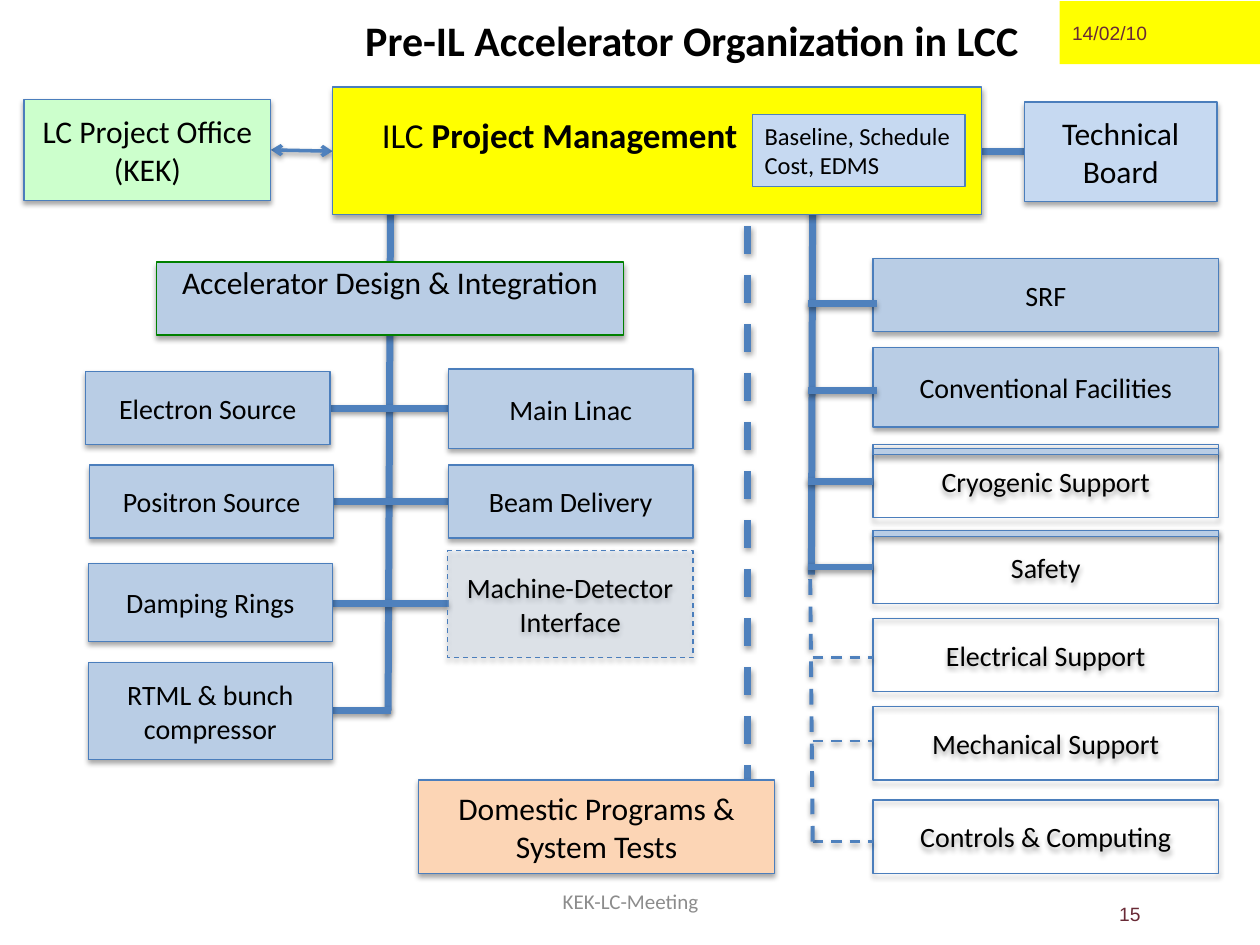
"""Build the accelerator organization chart slide."""
from dataclasses import dataclass

from lxml import etree
from pptx import Presentation
from pptx import util as u
from pptx.dml import color
from pptx.enum import dml, shapes, text
from pptx.oxml import ns

PROCESS = shapes.MSO_SHAPE.FLOWCHART_PROCESS
RECTANGLE = shapes.MSO_SHAPE.RECTANGLE
LEFT, CENTER, RIGHT = text.PP_ALIGN.LEFT, text.PP_ALIGN.CENTER, text.PP_ALIGN.RIGHT
TOP, MIDDLE = text.MSO_ANCHOR.TOP, text.MSO_ANCHOR.MIDDLE


@dataclass(frozen=True)
class Theme:
    """Colours, fonts and type sizes of the chart."""
    ink: str = "000000"
    maroon: str = "692A36"
    gray: str = "8C8C8C"
    yellow: str = "FFFF00"
    blue: str = "B9CDE5"
    pale_blue: str = "C6D9F1"
    mint: str = "CCFFCC"
    peach: str = "FCD5B5"
    green: str = "008000"
    outline: str = "4B7EBC"
    connector: str = "4F81BD"
    body_font: str = "Calibri"
    meta_font: str = "Arial"
    title: int = 24
    lead: int = 20
    unit: int = 18
    group: int = 16
    note: int = 14
    footer: int = 12
    meta: int = 11


class Chart:
    """Draws the elements of the chart on the current slide."""

    def __init__(self, slide, theme):
        """Keep the slide and its style."""
        self.slide, self.theme = slide, theme

    @staticmethod
    def apply(target, formats):
        """Set attributes of an object from a dict."""
        for name, value in formats.items():
            setattr(target, name, value)

    @staticmethod
    def add_xml(parent, tag, **attributes):
        """Append a drawing element and return it."""
        return etree.SubElement(parent, ns.qn(tag), attributes)

    def cast_shadow(self, effects, alpha, distance):
        """Add a soft shadow that falls straight down."""
        shadow = self.add_xml(effects, "a:outerShdw", blurRad=str(u.Pt(3.1)),
                              dist=str(u.Pt(distance)), dir="5400000", rotWithShape="0")
        tint = self.add_xml(shadow, "a:srgbClr", val=self.theme.ink)
        self.add_xml(tint, "a:alpha", val=str(alpha * 1000))

    def stroke(self, line, tint, width, dashed=False):
        """Style a line or an outline."""
        line.color.rgb = color.RGBColor.from_string(tint)
        line.width = u.Pt(width)
        if dashed:
            line.dash_style = dml.MSO_LINE.DASH

    def set_words(self, shape, words, size, align=CENTER, tint=None, font=None, **frame_formats):
        """Fill in paragraphs; runs between double asterisks are bold."""
        frame = shape.text_frame
        self.apply(frame, {"word_wrap": True, "vertical_anchor": MIDDLE, **frame_formats})
        for index, content in enumerate(words.split("\n")):
            paragraph = frame.add_paragraph() if index else frame.paragraphs[0]
            paragraph.alignment = align
            for part, piece in enumerate(content.split("**")):
                if piece:
                    run = paragraph.add_run()
                    run.text = piece
                    self.apply(run.font, {"size": u.Pt(size), "bold": part % 2 == 1,
                                          "name": font or self.theme.body_font})
                    run.font.color.rgb = color.RGBColor.from_string(tint or self.theme.ink)

    def label(self, place, words, size, **formats):
        """Add a text box."""
        box = self.slide.shapes.add_textbox(*map(u.Inches, place))
        self.set_words(box, words, size, **formats)

    def box(self, place, words="", size=None, fill=None, outline=None, kind=PROCESS,
            shadow=True, dashed=False, opacity=None, **formats):
        """Add a box with optional text."""
        shape = self.slide.shapes.add_shape(kind, *map(u.Inches, place))
        shape.shadow.inherit = False
        if fill:
            shape.fill.solid()
            shape.fill.fore_color.rgb = color.RGBColor.from_string(fill)
        else:
            shape.fill.background()
        if opacity:
            tint = shape._element.spPr.find(".//" + ns.qn("a:srgbClr"))
            self.add_xml(tint, "a:alpha", val=str(opacity * 1000))
        if outline == "none":
            shape.line.fill.background()
        else:
            self.stroke(shape.line, outline or self.theme.outline, 0.75, dashed)
        if shadow:
            self.cast_shadow(shape._element.spPr.find(ns.qn("a:effectLst")), 35, 1.8)
        if words:
            self.set_words(shape, words, size or self.theme.group, **formats)

    def link(self, x1, y1, x2, y2, width=4, dashed=False, arrows=False):
        """Add a connector."""
        connector = self.slide.shapes.add_connector(
            shapes.MSO_CONNECTOR.STRAIGHT, *map(u.Inches, (x1, y1, x2, y2)))
        self.stroke(connector.line, self.theme.connector, width, dashed)
        properties = connector._element.spPr
        if arrows:
            for end in ("a:headEnd", "a:tailEnd"):
                self.add_xml(properties.find(ns.qn("a:ln")), end, type="arrow")
        self.cast_shadow(self.add_xml(properties, "a:effectLst"), 38, 1.6)


def draw_header(chart, theme):
    """Draw the date, title, page number and footer."""
    meta = {"tint": theme.maroon, "font": theme.meta_font}
    chart.box((8.41, 0.01, 1.59, 0.5), "14/02/10", theme.meta, theme.yellow, "none",
              RECTANGLE, shadow=False, align=LEFT, **meta)
    chart.label((7.07, 7, 2.08, 0.5), "15", theme.meta, align=RIGHT, **meta)
    chart.label((2.8, 0.07, 5.49, 0.5), "**Pre-IL Accelerator Organization in LCC**",
                theme.title, align=LEFT, word_wrap=False, vertical_anchor=TOP)
    chart.label((3.42, 6.95, 3.17, 0.4), "KEK-LC-Meeting", theme.footer, tint=theme.gray)


def draw_support_groups(chart, theme):
    """Draw the technical support column."""
    left, width, height = 6.93, 2.74, 0.58
    for top, tall, name, fill in (
            (2.05, height, "SRF", theme.blue),
            (2.76, 0.63, "Conventional Facilities", theme.blue),
            (3.53, height, "Cryogenic Support", None),
            (4.21, height, "Safety", None),
            (4.91, height, "Electrical Support", None),
            (5.61, height, "Mechanical Support", None),
            (6.35, height, "Controls & Computing", None)):
        chart.box((left, top, width, tall), name, fill=fill)
    for top in (3.56, 4.21):
        chart.box((left, top, width, 0.05), fill=theme.blue)


def draw_links(chart):
    """Draw the connectors between the units."""
    chart.link(8.13, 1.2, 7.79, 1.2)
    chart.link(2.64, 1.2, 2.15, 1.19, width=2, arrows=True)
    chart.link(3.08, 5.64, 3.1, 1.47)
    for y in (3.24, 3.98, 4.79):
        chart.link(2.63, y, 3.56, y)
    chart.link(2.63, 5.64, 3.1, 5.64)
    chart.link(5.93, 6.68, 5.93, 1.45, dashed=True)
    chart.link(6.44, 4.56, 6.45, 1.47)
    for y, end in ((2.41, 6.96), (3.1, 6.96), (3.82, 6.93), (4.5, 6.93)):
        chart.link(6.41, y, end, y)
    for y in (5.22, 5.88, 6.68):
        chart.link(6.45, y, 6.93, y, width=1.5, dashed=True)
    chart.link(6.45, 6.68, 6.43, 4.57, width=2.25, dashed=True)


def draw_units(chart, theme):
    """Draw management, boards and the accelerator design groups."""
    chart.box((0.19, 0.79, 1.96, 0.8), "LC Project Office (KEK)", theme.unit, theme.mint)
    chart.box((2.64, 0.69, 5.15, 1.01), "ILC **Project Management**", theme.lead, theme.yellow,
              align=LEFT, vertical_anchor=TOP, margin_left=u.Inches(0.39),
              margin_top=u.Inches(0.21))
    chart.box((5.97, 0.91, 1.69, 0.57), "Baseline, Schedule\nCost, EDMS", theme.note,
              theme.pale_blue, theme.connector, RECTANGLE, shadow=False, align=LEFT,
              word_wrap=False, vertical_anchor=TOP)
    chart.box((8.13, 0.81, 1.53, 0.79), "Technical\nBoard", theme.unit, theme.pale_blue)
    chart.box((1.24, 2.08, 3.71, 0.58), "Accelerator Design & Integration", theme.unit,
              theme.blue, theme.green, vertical_anchor=TOP, margin_top=u.Inches(0.01))
    for left, top, height, name in (
            (0.68, 2.95, 0.58, "Electron Source"),
            (0.71, 3.69, 0.58, "Positron Source"),
            (0.7, 4.47, 0.62, "Damping Rings"),
            (0.7, 5.26, 0.77, "RTML & bunch compressor"),
            (3.56, 2.93, 0.63, "Main Linac"),
            (3.56, 3.69, 0.58, "Beam Delivery")):
        chart.box((left, top, 1.94, height), name, fill=theme.blue)
    chart.box((3.55, 4.37, 1.95, 0.85), "Machine-Detector Interface", fill=theme.blue,
              dashed=True, opacity=25)
    chart.box((3.32, 6.19, 2.83, 0.74), "Domestic Programs &\nSystem Tests", theme.unit,
              theme.peach)


def main():
    """Build and save the presentation."""
    presentation = Presentation()
    presentation.slide_width, presentation.slide_height = u.Inches(10), u.Inches(7.5)
    theme = Theme()
    chart = Chart(presentation.slides.add_slide(presentation.slide_layouts[6]), theme)
    draw_header(chart, theme)
    draw_support_groups(chart, theme)
    draw_links(chart)
    draw_units(chart, theme)
    presentation.save("out.pptx")


if __name__ == "__main__":
    main()
